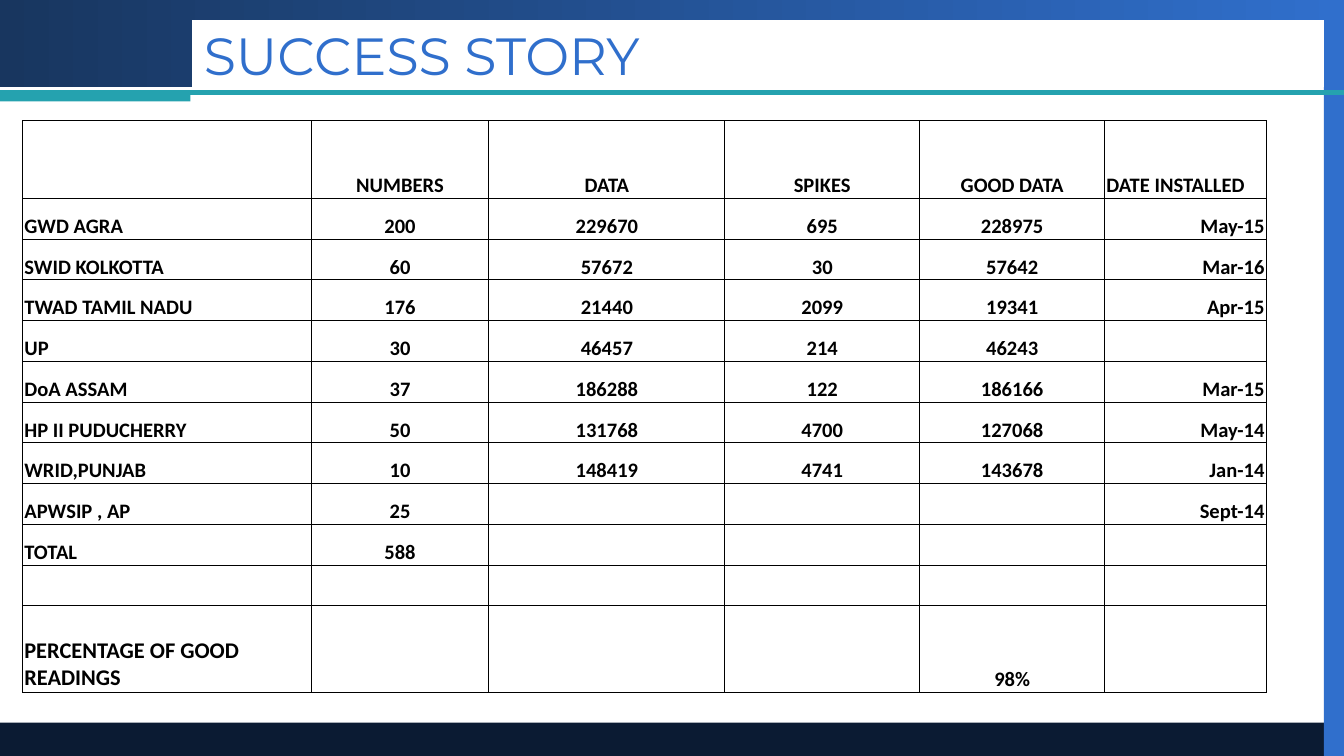
from dataclasses import dataclass

from lxml import etree
from pptx import Presentation
from pptx.dml.color import RGBColor
from pptx.enum.shapes import MSO_CONNECTOR, MSO_SHAPE
from pptx.enum.text import MSO_ANCHOR, MSO_AUTO_SIZE, PP_ALIGN
from pptx.oxml.ns import qn
from pptx.util import Cm, Pt

RECT, STRAIGHT = MSO_SHAPE.RECTANGLE, MSO_CONNECTOR.STRAIGHT
MIDDLE, BOTTOM = MSO_ANCHOR.MIDDLE, MSO_ANCHOR.BOTTOM
LEFT, CENTER, RIGHT = PP_ALIGN.LEFT, PP_ALIGN.CENTER, PP_ALIGN.RIGHT


@dataclass(frozen=True)
class Theme:
    navy: str = "0B1B33"
    deep_blue: str = "18365F"
    blue: str = "306FCC"
    teal: str = "25A2AF"
    white: str = "FFFFFF"
    black: str = "000000"
    title_font: str = "Montserrat"
    table_font: str = "Calibri"
    title_size: float = 28
    table_size: float = 11
    summary_size: float = 12
    rule_width: float = 2.25
    border_width: float = 0.5


@dataclass(frozen=True)
class Band:
    left: float
    top: float
    width: float
    height: float
    color: str
    end_color: str = ""


THEME = Theme()
WIDTH, HEIGHT = 25.4, 14.29
RULE_Y = 1.75
BANDS = [
    Band(0, 0, WIDTH, 1.65, THEME.deep_blue, THEME.blue),
    Band(0, 13.66, WIDTH, 0.63, THEME.navy),
    Band(25.02, 0.05, 0.38, 14.24, THEME.blue),
    Band(3.63, 0.38, 21.39, 1.27, THEME.white),
    Band(0, RULE_Y, 3.6, 0.17, THEME.teal),
]
COLUMN_WIDTHS = [5.45, 3.36, 4.46, 3.68, 3.5, 3.05]
COLUMN_ALIGNS = [LEFT, CENTER, CENTER, CENTER, CENTER, RIGHT]
HEADER_HEIGHT, ROW_HEIGHT, SUMMARY_HEIGHT = 1.47, 0.77, 1.63
ROWS = [
    ["", "NUMBERS", "DATA", "SPIKES", "GOOD DATA", "DATE INSTALLED"],
    ["GWD AGRA", "200", "229670", "695", "228975", "May-15"],
    ["SWID KOLKOTTA", "60", "57672", "30", "57642", "Mar-16"],
    ["TWAD TAMIL NADU", "176", "21440", "2099", "19341", "Apr-15"],
    ["UP", "30", "46457", "214", "46243", ""],
    ["DoA ASSAM", "37", "186288", "122", "186166", "Mar-15"],
    ["HP II PUDUCHERRY", "50", "131768", "4700", "127068", "May-14"],
    ["WRID,PUNJAB", "10", "148419", "4741", "143678", "Jan-14"],
    ["APWSIP , AP", "25", "", "", "", "Sept-14"],
    ["TOTAL", "588", "", "", "", ""],
    [""] * 6,
    ["PERCENTAGE OF GOOD READINGS", "", "", "", "98%", ""],
]


def rgb(color: str) -> RGBColor:
    return RGBColor.from_string(color)


def add_band(s, band: Band) -> None:
    sp = s.shapes.add_shape(RECT, Cm(band.left), Cm(band.top), Cm(band.width), Cm(band.height))
    sp.shadow.inherit = False
    sp.line.fill.background()
    if band.end_color:
        sp.fill.gradient()
        sp.fill.gradient_angle = 0
        for stop, color in zip(sp.fill.gradient_stops, (band.color, band.end_color)):
            stop.color.rgb = rgb(color)
    else:
        sp.fill.solid()
        sp.fill.fore_color.rgb = rgb(band.color)


def add_rule(s) -> None:
    line = s.shapes.add_connector(STRAIGHT, 0, Cm(RULE_Y), Cm(WIDTH), Cm(RULE_Y))
    line.line.color.rgb = rgb(THEME.teal)
    line.line.width = Pt(THEME.rule_width)
    etree.SubElement(line._element.spPr, qn("a:effectLst"))


def set_title(s, text: str) -> None:
    title = s.shapes.title
    s.shapes._spTree.append(title._element)  # bring in front of the bands
    title.left, title.top, title.width, title.height = Cm(3.6), Cm(0.48), Cm(19.48), Cm(1.12)
    tf = title.text_frame
    tf.text = text
    tf.auto_size = MSO_AUTO_SIZE.NONE
    tf.vertical_anchor = MIDDLE
    tf.margin_top = tf.margin_bottom = 0
    p = tf.paragraphs[0]
    p.alignment = LEFT
    font = p.runs[0].font
    font.name, font.size = THEME.title_font, Pt(THEME.title_size)
    font.color.rgb = rgb(THEME.blue)


def set_borders(cell) -> None:
    tc_pr = cell._tc.get_or_add_tcPr()
    for i, side in enumerate(("lnL", "lnR", "lnT", "lnB")):
        ln = etree.Element(qn(f"a:{side}"), w=str(Pt(THEME.border_width)))
        fill = etree.SubElement(ln, qn("a:solidFill"))
        etree.SubElement(fill, qn("a:srgbClr"), val=THEME.black)
        tc_pr.insert(i, ln)


def format_cell(cell, text: str, align: PP_ALIGN, size: float) -> None:
    cell.fill.background()
    set_borders(cell)
    cell.vertical_anchor = BOTTOM
    cell.margin_left = cell.margin_right = cell.margin_top = Cm(0.03)
    cell.margin_bottom = 0
    cell.text_frame.text = text
    p = cell.text_frame.paragraphs[0]
    p.alignment = align
    for r in p.runs:
        r.font.name, r.font.size, r.font.bold = THEME.table_font, Pt(size), True
        r.font.color.rgb = rgb(THEME.black)
    if not text:  # keeps an empty cell from stretching its row
        etree.SubElement(p._p, qn("a:endParaRPr"), sz=str(int(size * 100)))


def add_results_table(s) -> None:
    last = len(ROWS) - 1
    heights = [HEADER_HEIGHT] + [ROW_HEIGHT] * (last - 1) + [SUMMARY_HEIGHT]
    frame = s.shapes.add_table(len(ROWS), len(COLUMN_WIDTHS), Cm(0.43), Cm(2.28),
                               Cm(sum(COLUMN_WIDTHS)), Cm(sum(heights)))
    table = frame.table
    table.first_row = table.horz_banding = False
    for column, width in zip(table.columns, COLUMN_WIDTHS):
        column.width = Cm(width)
    for i, (values, height) in enumerate(zip(ROWS, heights)):
        table.rows[i].height = Cm(height)
        for j, (text, align) in enumerate(zip(values, COLUMN_ALIGNS)):
            if i == 0 and align == RIGHT:
                align = LEFT
            size = THEME.summary_size if (i, j) == (last, 0) else THEME.table_size
            format_cell(table.cell(i, j), text, align, size)


def main() -> None:
    prs = Presentation()
    prs.slide_width, prs.slide_height = Cm(WIDTH), Cm(HEIGHT)
    s = prs.slides.add_slide(prs.slide_layouts.get_by_name("Title Only"))
    for band in BANDS:
        add_band(s, band)
    add_rule(s)
    set_title(s, "SUCCESS STORY")
    add_results_table(s)
    prs.save("out.pptx")


if __name__ == "__main__":
    main()
